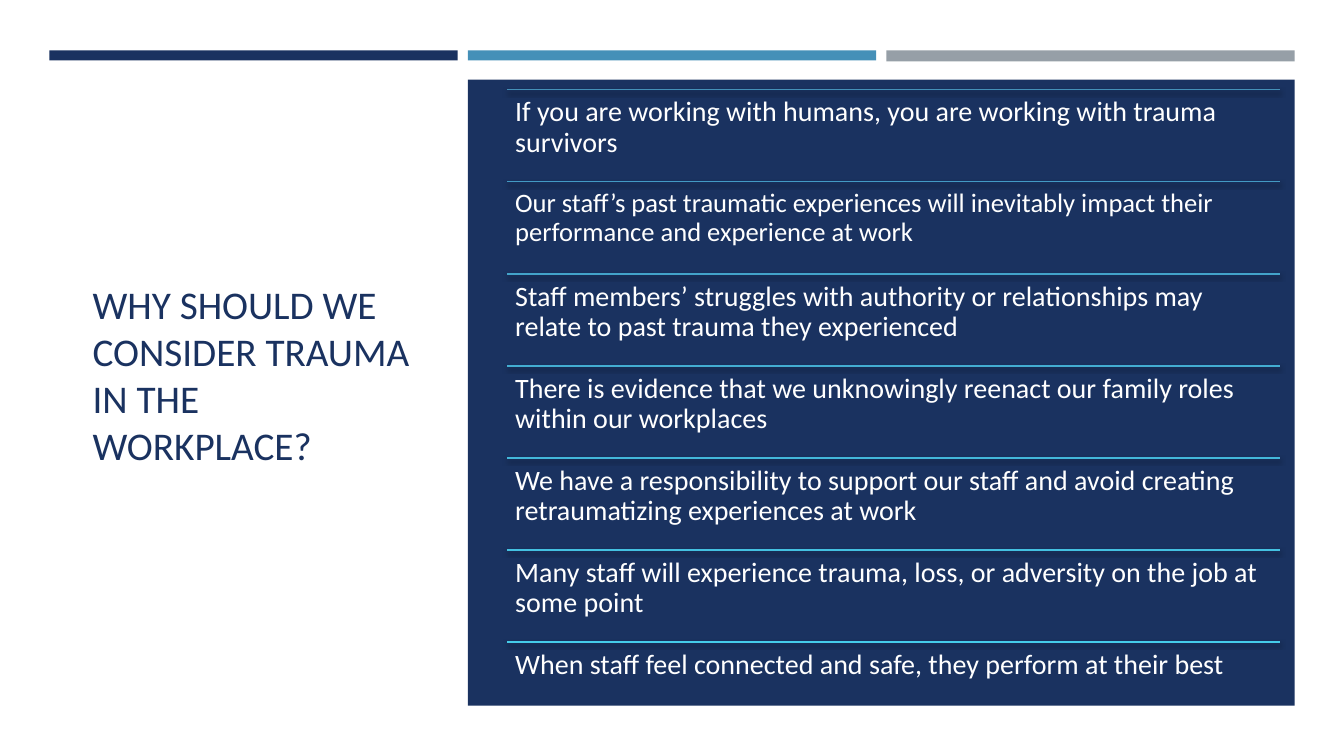
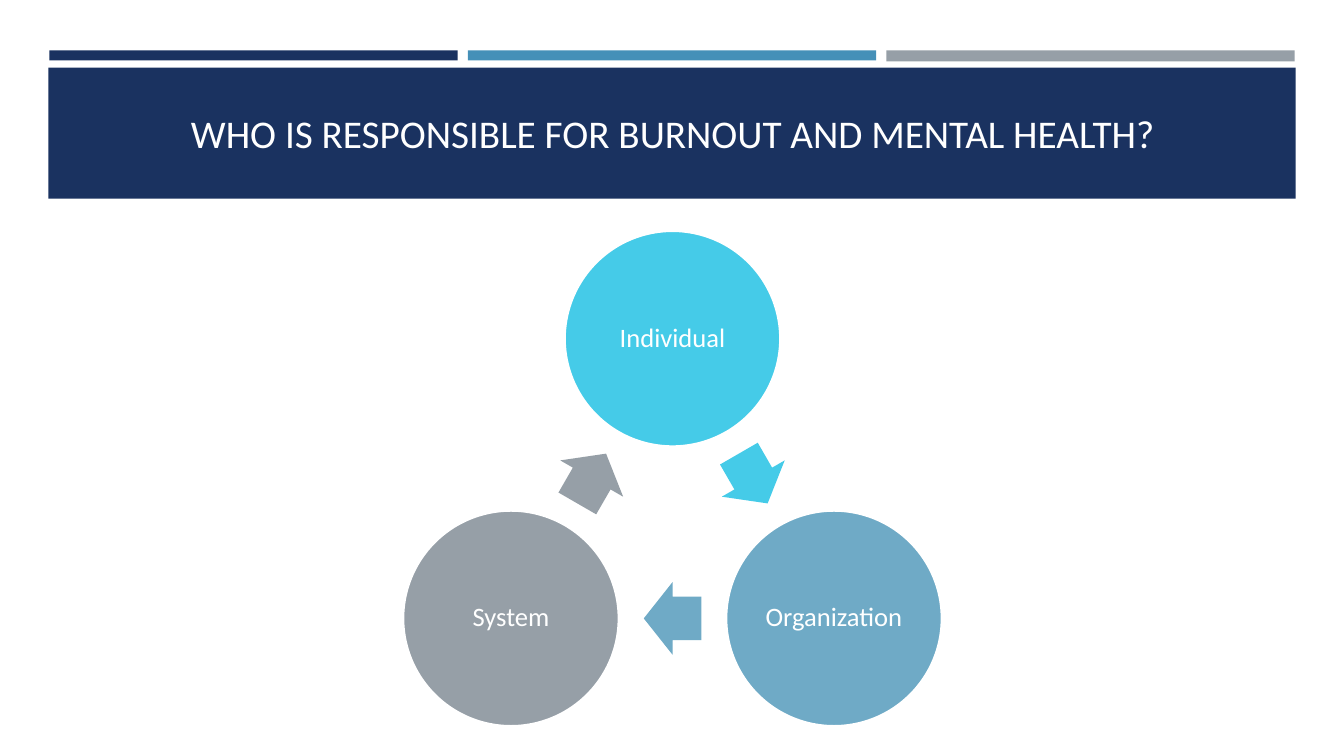
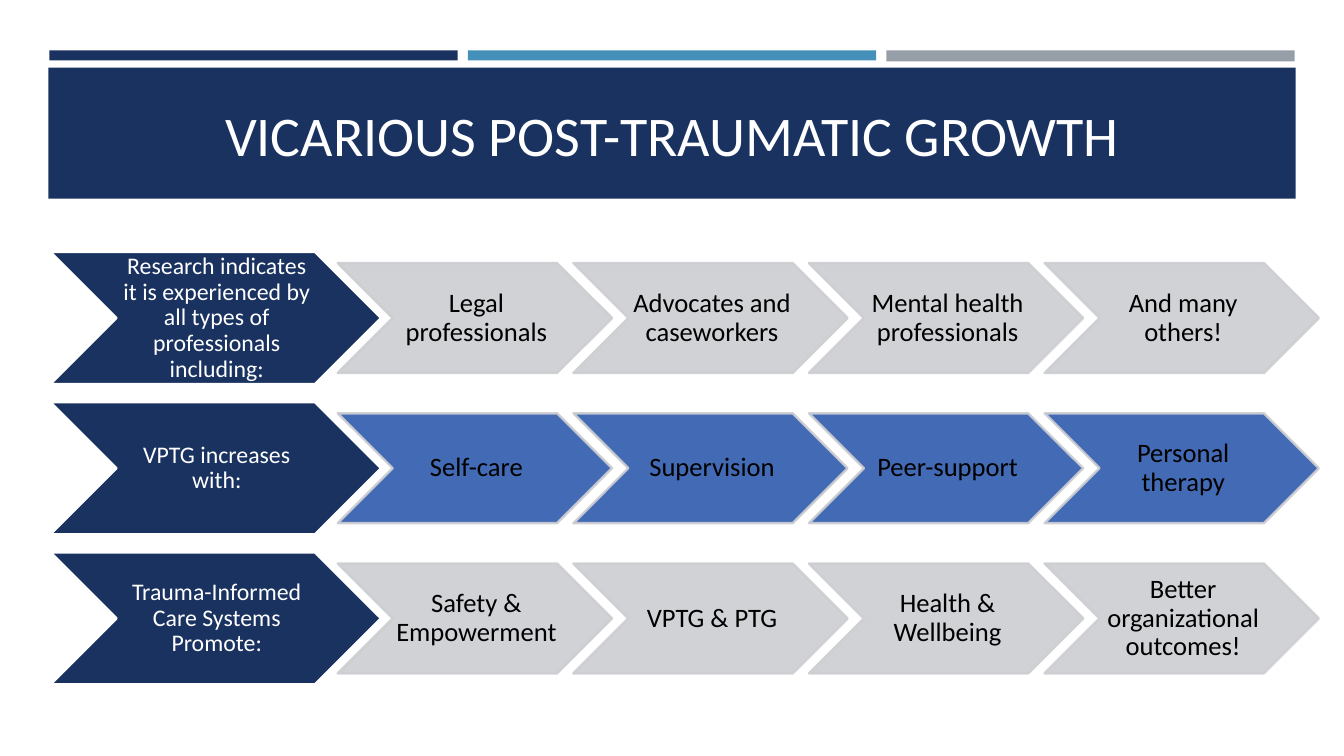
from dataclasses import dataclass
from math import cos, radians, sin

from lxml.etree import SubElement
from pptx import Presentation
from pptx.dml.color import RGBColor
from pptx.enum.shapes import MSO_CONNECTOR, MSO_SHAPE
from pptx.enum.text import MSO_ANCHOR, PP_ALIGN
from pptx.oxml.ns import qn
from pptx.util import Pt

PX = 9144
WIDTH, HEIGHT = 1333, 750


@dataclass(frozen=True)
class Theme:
    font: str = "Calibri"
    navy: str = "1A3260"
    blue: str = "4590B8"
    gray: str = "969FA7"
    cyan: str = "45CBE8"
    steel: str = "6FAAC6"
    silver: str = "CDCED2"
    royal: str = "2F5AAC"
    white: str = "FFFFFF"
    black: str = "000000"
    title: int = 28
    big_title: int = 40
    reason: int = 20
    label: int = 19
    lead: int = 17
    outline: float = 1.75


T = Theme()

REASONS_TITLE = "WHY SHOULD WE CONSIDER TRAUMA IN THE WORKPLACE?"
REASONS = [
    ("If you are working with humans, you are working with trauma survivors", "4590B8", T.reason),
    ("Our staff’s past traumatic experiences will inevitably impact their performance "
     "and experience at work", "4399C2", T.label),
    ("Staff members’ struggles with authority or relationships may relate to past trauma "
     "they experienced", "43A3CA", T.reason),
    ("There is evidence that we unknowingly reenact our family roles within our workplaces",
     "43ADD2", T.reason),
    ("We have a responsibility to support our staff and avoid creating retraumatizing "
     "experiences at work", "43B7DA", T.reason),
    ("Many staff will experience trauma, loss, or adversity on the job at some point",
     "44C1E1", T.reason),
    ("When staff feel connected and safe, they perform at their best", "45CBE8", T.reason),
]

CYCLE_TITLE = "WHO IS RESPONSIBLE FOR BURNOUT AND MENTAL HEALTH?"
CYCLE = [("Individual", T.cyan), ("Organization", T.steel), ("System", T.gray)]

GROWTH_TITLE = "VICARIOUS POST-TRAUMATIC GROWTH"
GROWTH = [
    ("Research indicates it is experienced by all types of professionals including:", T.silver,
     ["Legal professionals", "Advocates and caseworkers", "Mental health professionals",
      "And many others!"]),
    ("VPTG increases with:", T.royal,
     ["Self-care", "Supervision", "Peer-support", "Personal therapy"]),
    ("Trauma-Informed Care Systems Promote:", T.silver,
     ["Safety & Empowerment", "VPTG & PTG", "Health & Wellbeing",
      "Better organizational outcomes!"]),
]


def emu(*lengths):
    return [round(v * PX) for v in lengths]


def assign(obj, values):
    for name, value in values.items():
        setattr(obj, name, value)


def set_alpha(color_format, percent):
    color = color_format._xFill.find(qn("a:srgbClr"))
    SubElement(color, qn("a:alpha"), val=str(percent * 1000))


def write(sp, text, size, color, align=PP_ALIGN.CENTER, anchor=MSO_ANCHOR.MIDDLE,
          insets=(10, 5, 10, 5), spacing=0.9):
    tf = sp.text_frame
    left, top, right, bottom = emu(*insets)
    assign(tf, dict(word_wrap=True, vertical_anchor=anchor, margin_left=left,
                    margin_top=top, margin_right=right, margin_bottom=bottom))
    p = tf.paragraphs[0]
    assign(p, dict(alignment=align, line_spacing=spacing))
    r = p.add_run()
    r.text = text
    assign(r.font, dict(name=T.font, size=Pt(size)))
    r.font.color.rgb = RGBColor.from_string(color)


def add_text(s, box, *args, **kwargs):
    write(s.shapes.add_textbox(*emu(*box)), *args, **kwargs)


def add_shape(s, kind, box, fill, line=None, alpha=None):
    sp = s.shapes.add_shape(kind, *emu(*box))
    sp.shadow.inherit = False
    sp.fill.solid()
    sp.fill.fore_color.rgb = RGBColor.from_string(fill)
    if line:
        sp.line.color.rgb = RGBColor.from_string(line)
        sp.line.width = Pt(T.outline)
    else:
        sp.line.fill.background()
    if alpha:
        for color in sp._element.spPr.iter(qn("a:srgbClr")):
            SubElement(color, qn("a:alpha"), val=str(alpha * 1000))
    return sp


def add_rule(s, x1, x2, y, color):
    rule = s.shapes.add_connector(MSO_CONNECTOR.STRAIGHT, *emu(x1, y, x2, y))
    rule.line.color.rgb = RGBColor.from_string(color)
    rule.line.width = Pt(1)
    effects = SubElement(rule._element.spPr, qn("a:effectLst"))
    shadow = SubElement(effects, qn("a:outerShdw"), blurRad=str(Pt(3)), dist=str(Pt(2)),
                        dir="5400000", rotWithShape="0")
    black = SubElement(shadow, qn("a:srgbClr"), val=T.black)
    SubElement(black, qn("a:alpha"), val="55000")


def new_slide(prs):
    s = prs.slides.add_slide(prs.slide_layouts[6])
    for i, (color, height) in enumerate([(T.navy, 10), (T.blue, 10), (T.gray, 11)]):
        add_shape(s, MSO_SHAPE.RECTANGLE, (49 + 415 * i, 50, 405, height), color)
    return s


def banner_slide(prs, title, box, size):
    s = new_slide(prs)
    add_shape(s, MSO_SHAPE.RECTANGLE, (48, 67, 1237, 130), T.navy)
    add_text(s, box, title, size, T.white, anchor=MSO_ANCHOR.BOTTOM, spacing=1.0)
    return s


def reasons_slide(prs):
    s = new_slide(prs)
    add_text(s, (82, 114, 334, 515), REASONS_TITLE, T.title, T.navy,
             align=PP_ALIGN.LEFT, spacing=1.0)
    add_shape(s, MSO_SHAPE.RECTANGLE, (464, 79, 820, 621), T.navy)
    left, top, width, pitch = 503, 89, 767, 91.33
    for i, (text, color, size) in enumerate(REASONS):
        y = top + pitch * i
        add_rule(s, left, left + width, y, color)
        add_text(s, (left, y, width, 91), text, size, T.white, align=PP_ALIGN.LEFT,
                 anchor=MSO_ANCHOR.TOP, insets=(8, 8, 8, 8))


def cycle_slide(prs):
    s = banner_slide(prs, CYCLE_TITLE, (64, 77, 1206, 83), T.title)
    center_x, center_y, radius = 667, 521, 185
    diameter, arrow_w, arrow_h = 214, 57, 72

    def box_at(angle, distance, w, h):
        x = center_x + distance * cos(radians(angle))
        y = center_y + distance * sin(radians(angle))
        return x - w / 2, y - h / 2, w, h

    step = 360 / len(CYCLE)
    for i, (text, color) in enumerate(CYCLE):
        angle = step * i - 90
        circle = add_shape(s, MSO_SHAPE.OVAL, box_at(angle, radius, diameter, diameter),
                           color, T.white)
        write(circle, text, T.label, T.white, insets=(3, 3, 3, 3))
        arrow = add_shape(s, MSO_SHAPE.RIGHT_ARROW,
                          box_at(angle + step / 2, radius / 2, arrow_w, arrow_h), color)
        arrow.adjustments[0], arrow.adjustments[1] = 0.6, 0.5
        arrow.rotation = step * (i + 0.5)


def growth_slide(prs):
    s = banner_slide(prs, GROWTH_TITLE, (0, 85, WIDTH, 86), T.big_title)
    for row, (lead, fill, items) in enumerate(GROWTH):
        y = 250 + 149 * row
        sp = add_shape(s, MSO_SHAPE.CHEVRON, (50, y, 328, 131), T.navy, T.white)
        write(sp, lead, T.lead, T.white, insets=(2, 1, 0, 1))
        for col, item in enumerate(items):
            sp = add_shape(s, MSO_SHAPE.CHEVRON, (335 + 233.67 * col, y + 11, 272, 109),
                           fill, T.silver, alpha=90)
            write(sp, item, T.label, T.black, insets=(3, 1, 0, 1))


def main():
    prs = Presentation()
    prs.slide_width, prs.slide_height = emu(WIDTH, HEIGHT)
    for build in (reasons_slide, cycle_slide, growth_slide):
        build(prs)
    prs.save("out.pptx")


if __name__ == "__main__":
    main()
